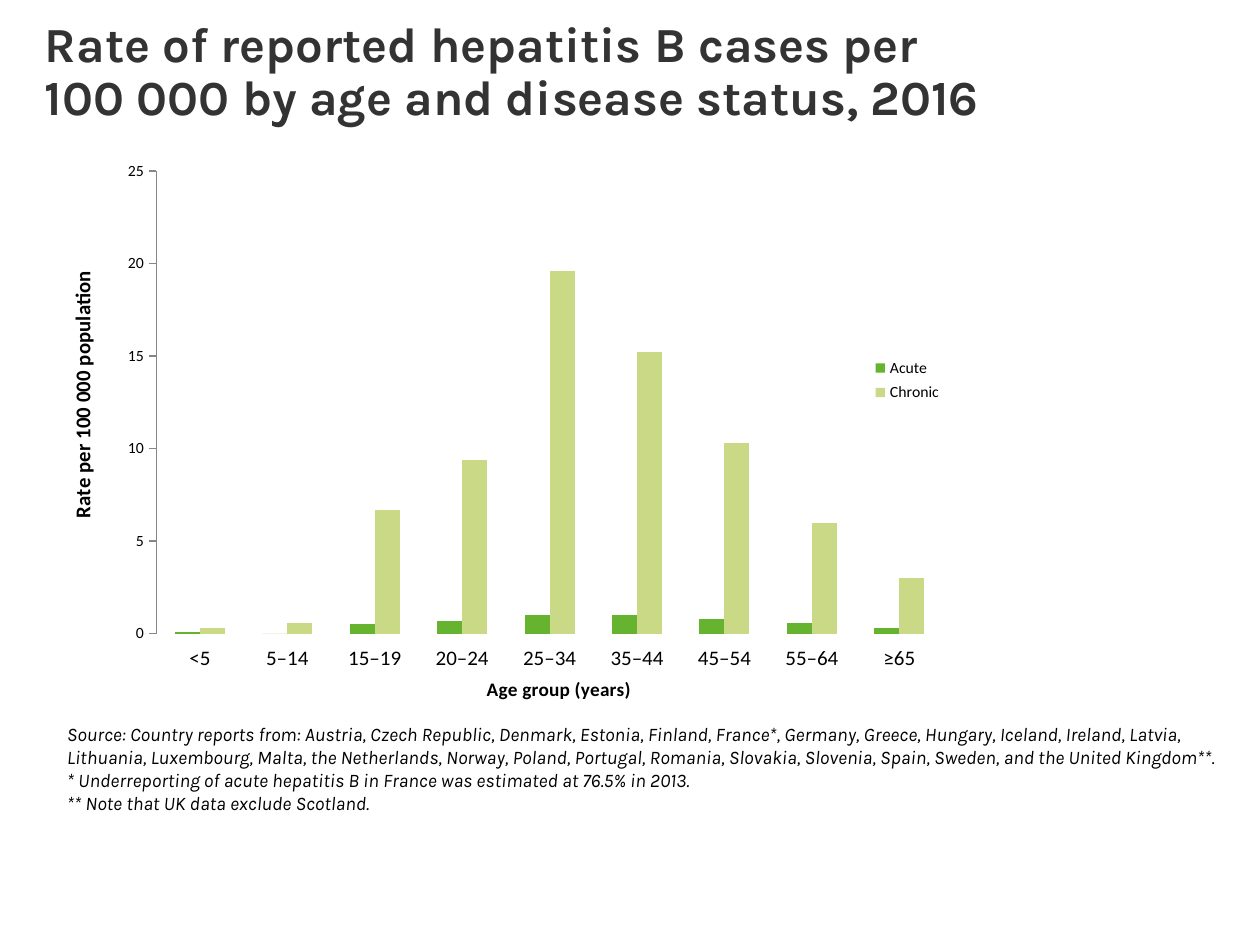
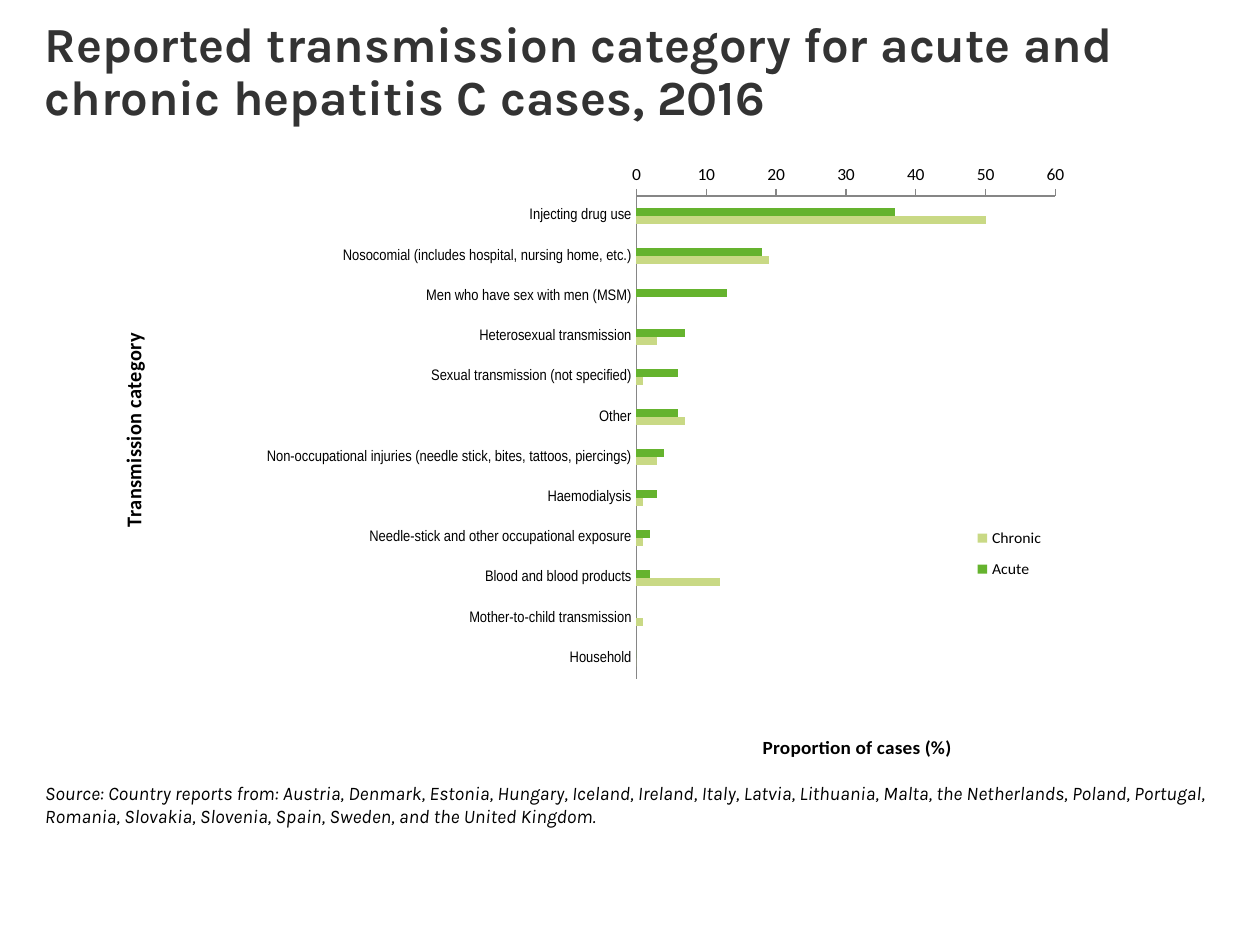
"""Builds two slides of hepatitis charts, each with a title and a source note."""
from dataclasses import dataclass

from lxml import etree
from pptx import Presentation
from pptx import util as u
from pptx.chart import data
from pptx.dml.color import RGBColor
from pptx.enum import chart as ch
from pptx.enum import text
from pptx.oxml import ns

PX = 914400 / 126


def px(*lengths):
    return [u.Emu(round(length * PX)) for length in lengths]


@dataclass(frozen=True)
class Theme:
    heading_font: str = "Karla"
    chart_font: str = "Calibri"
    narrow_font: str = "Arial Narrow"
    heading: str = "333333"
    ink: str = "000000"
    axis: str = "868686"
    acute: str = "65B32E"
    chronic: str = "C9D985"
    heading_size: int = 28
    note_size: int = 11
    small: int = 9
    medium: int = 10
    large: int = 12


THEME = Theme()


def style(font, name, size, colour, bold=False, italic=False):
    font.name, font.size, font.bold, font.italic = name, u.Pt(size), bold, italic
    font.color.rgb = RGBColor.from_string(colour)


def write(frame, paragraphs, spacing=None, **format):
    for index, words in enumerate(paragraphs):
        paragraph = frame.add_paragraph() if index else frame.paragraphs[0]
        paragraph.text = words
        paragraph.line_spacing = spacing
        for run in paragraph.runs:
            style(run.font, **format)


def place(element, index, inner=False, **fractions):
    for old in element.findall(ns.qn("c:layout")):
        element.remove(old)
    layout = etree.Element(ns.qn("c:layout"))
    manual = etree.SubElement(layout, ns.qn("c:manualLayout"))
    settings = {"layoutTarget": "inner"} if inner else {}
    settings.update(xMode="edge", yMode="edge", **fractions)
    for tag, value in settings.items():
        etree.SubElement(manual, ns.qn(f"c:{tag}")).set("val", str(value))
    element.insert(index, layout)


class Deck:
    def __init__(self, theme):
        self.theme = theme
        self.show = Presentation()
        self.show.slide_width, self.show.slide_height = px(1260, 945)
        self.slide = None

    def page(self, heading):
        self.slide = self.show.slides.add_slide(self.show.slide_layouts[6])
        self.text((45, 20, 1142, 115), [heading], spacing=0.9, size=self.theme.heading_size,
                  colour=self.theme.heading, bold=True)

    def text(self, box, paragraphs, **format):
        frame = self.slide.shapes.add_textbox(*px(*box)).text_frame
        frame.word_wrap = True
        frame.vertical_anchor = text.MSO_ANCHOR.TOP
        frame.margin_left = frame.margin_top = frame.margin_right = frame.margin_bottom = 0
        write(frame, paragraphs, name=self.theme.heading_font, **format)

    def note(self, box, paragraphs):
        self.text(box, paragraphs, size=self.theme.note_size, colour=self.theme.ink, italic=True)

    def bars(self, box, kind, categories, rates, gap, plot, legend):
        source = data.CategoryChartData()
        source.categories = categories
        for status, values in rates.items():
            source.add_series(status, values)
        chart = self.slide.shapes.add_chart(kind, *px(*box), source).chart
        style(chart.font, self.theme.chart_font, self.theme.small, self.theme.ink)
        chart.has_title = False
        bars = chart.plots[0]
        bars.gap_width, bars.overlap, bars.vary_by_categories = gap, 0, False
        for series, colour in zip(bars.series, (self.theme.acute, self.theme.chronic)):
            series.format.fill.solid()
            series.format.fill.fore_color.rgb = RGBColor.from_string(colour)
            series.invert_if_negative = False
        chart.has_legend = True
        chart.legend.position = ch.XL_LEGEND_POSITION.RIGHT
        chart.legend.include_in_layout = False
        style(chart.legend.font, self.theme.chart_font, self.theme.small, self.theme.ink)
        place(next(chart.element.iter(ns.qn("c:plotArea"))), 0, inner=True, **plot)
        place(next(chart.element.iter(ns.qn("c:legend"))), 1, **legend)
        return chart

    def axis(self, axis, title, title_size, corner, size, font=None, tick=ch.XL_TICK_MARK.OUTSIDE,
             line=True, upright=False):
        axis.has_major_gridlines = False
        axis.major_tick_mark, axis.minor_tick_mark = tick, ch.XL_TICK_MARK.NONE
        style(axis.tick_labels.font, font or self.theme.chart_font, size, self.theme.ink)
        if line:
            axis.format.line.color.rgb = RGBColor.from_string(self.theme.axis)
            axis.format.line.width = u.Pt(0.75)
        else:
            axis.format.line.fill.background()
        write(axis.axis_title.text_frame, [title], name=self.theme.chart_font, size=title_size,
              colour=self.theme.ink, bold=True)
        title_element = axis.axis_title.element
        place(title_element, 1, x=corner[0], y=corner[1])
        if upright:
            body = next(title_element.iter(ns.qn("a:bodyPr")))
            body.set("rot", "-5400000")
            body.set("vert", "horz")

    def scale(self, axis, top, step):
        axis.minimum_scale, axis.maximum_scale, axis.major_unit = 0, top, step
        axis.tick_labels.number_format = "0"
        axis.tick_labels.number_format_is_linked = False


def age_page(deck):
    deck.page("Rate of reported hepatitis B cases per\n100 000 by age and disease status, 2016")
    deck.note((67, 722, 1160, 142), [
        "Source: Country reports from: Austria, Czech Republic, Denmark, Estonia, Finland, "
        "France*, Germany, Greece, Hungary, Iceland, Ireland, Latvia, Lithuania, Luxembourg, "
        "Malta, the Netherlands, Norway, Poland, Portugal, Romania, Slovakia, Slovenia, Spain, "
        "Sweden, and the United Kingdom**.",
        "* Underreporting of acute hepatitis B in France was estimated at 76.5% in 2013.",
        "** Note that UK data exclude Scotland."])
    ages = ["<5", "5–14", "15–19", "20–24", "25–34", "35–44", "45–54", "55–64", "≥65"]
    rates = {"Acute": [0.1, 0, 0.5, 0.7, 1, 1, 0.8, 0.6, 0.3],
             "Chronic": [0.3, 0.6, 6.7, 9.4, 19.6, 15.2, 10.3, 6, 3]}
    chart = deck.bars((54, 149, 1022, 558), ch.XL_CHART_TYPE.COLUMN_CLUSTERED, ages, rates, 150,
                      plot=dict(x=0.1, y=0.04, w=0.77, h=0.84),
                      legend=dict(x=0.79, y=0.37, w=0.09, h=0.1))
    deck.axis(chart.category_axis, "Age group (years)", 11, (0.42, 0.95), deck.theme.large,
              line=False)
    deck.axis(chart.value_axis, "Rate per 100 000 population", 12, (0.01, 0.22),
              deck.theme.small, upright=True)
    deck.scale(chart.value_axis, 25, 5)


def transmission_page(deck):
    deck.page("Reported transmission category for acute and chronic hepatitis C cases, 2016")
    deck.note((45, 781, 1163, 47), [
        "Source: Country reports from: Austria, Denmark, Estonia, Hungary, Iceland, Ireland, "
        "Italy, Latvia, Lithuania, Malta, the Netherlands, Poland, Portugal, Romania, Slovakia, "
        "Slovenia, Spain, Sweden, and the United Kingdom."])
    routes = ["Injecting drug use", "Nosocomial (includes hospital, nursing home, etc.)",
              "Men who have sex with men (MSM)", "Heterosexual transmission",
              "Sexual transmission (not specified)", "Other",
              "Non-occupational injuries (needle stick, bites, tattoos, piercings)",
              "Haemodialysis", "Needle-stick and other occupational exposure",
              "Blood and blood products", "Mother-to-child transmission", "Household"]
    shares = {"Acute": [37, 18, 13, 7, 6, 6, 4, 3, 2, 2, 0, 0],
              "Chronic": [50, 19, 0, 3, 1, 7, 3, 1, 1, 12, 1, 0]}
    chart = deck.bars((105, 165, 1022, 601), ch.XL_CHART_TYPE.BAR_CLUSTERED, routes, shares, 300,
                      plot=dict(x=0.52, y=0.02, w=0.41, h=0.83),
                      legend=dict(x=0.84, y=0.57, w=0.09, h=0.13))
    deck.axis(chart.category_axis, "Transmission category", 12, (0.01, 0.26), deck.theme.small,
              font=deck.theme.narrow_font, tick=ch.XL_TICK_MARK.NONE, upright=True)
    chart.category_axis.reverse_order = True
    chart.category_axis.crosses = ch.XL_AXIS_CROSSES.MAXIMUM
    deck.axis(chart.value_axis, "Proportion of cases (%)", 11, (0.64, 0.94), deck.theme.medium)
    deck.scale(chart.value_axis, 60, 10)


def main():
    deck = Deck(THEME)
    age_page(deck)
    transmission_page(deck)
    deck.show.save("out.pptx")


if __name__ == "__main__":
    main()
